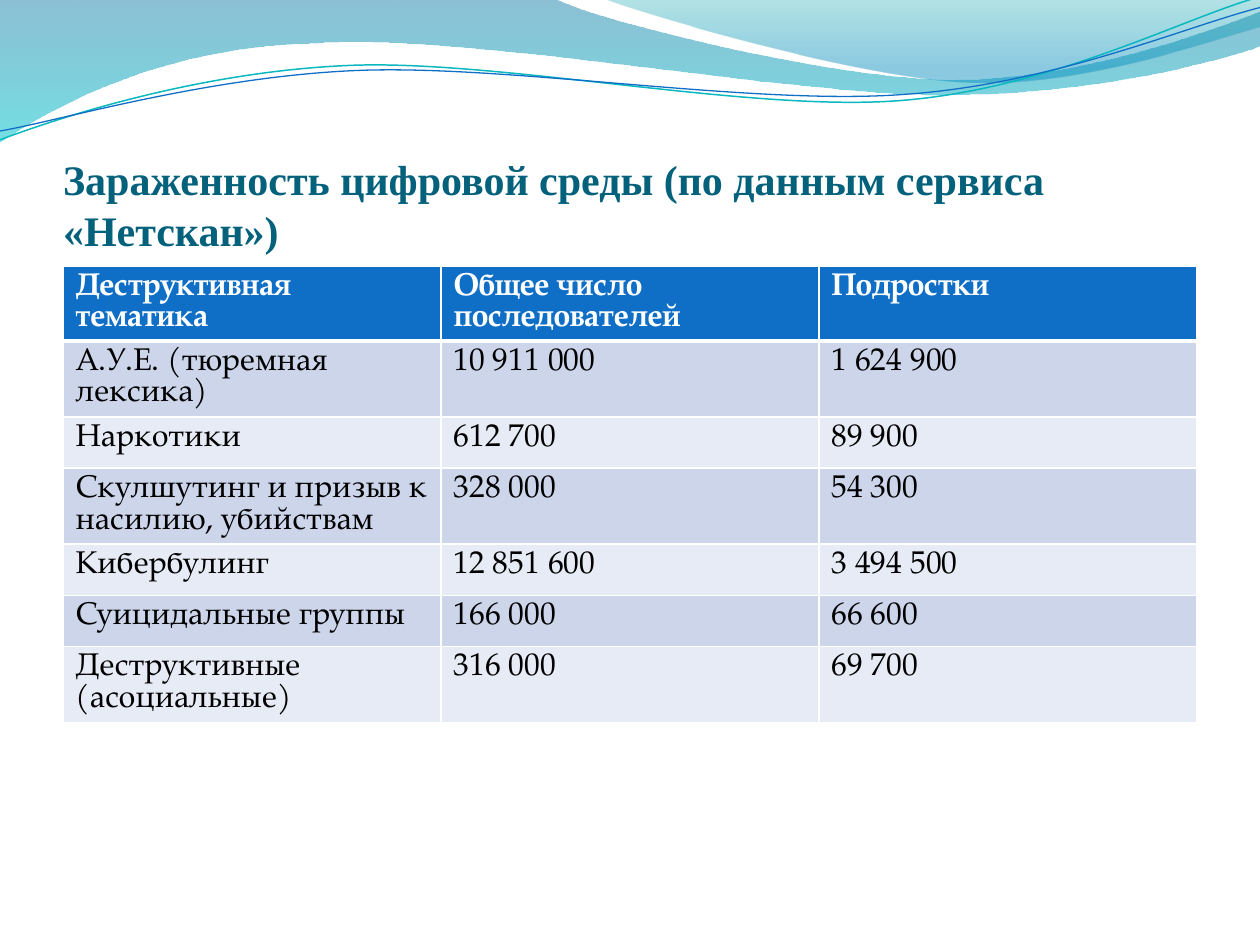
from lxml import etree
from pptx import Presentation
from pptx.dml.color import RGBColor
from pptx.enum.text import MSO_ANCHOR, PP_ALIGN
from pptx.oxml.ns import qn
from pptx.util import Inches, Pt

BOTTOM = MSO_ANCHOR.BOTTOM
LEFT = PP_ALIGN.LEFT
WHITE = RGBColor(0xFF, 0xFF, 0xFF)
BLACK = RGBColor(0, 0, 0)
TITLE_TEAL = RGBColor(0x04, 0x61, 0x7B)
BLUE = RGBColor(0x0F, 0x6F, 0xC6)
TURQUOISE = RGBColor(0x0A, 0xB8, 0xBF)
BAND_DARK = RGBColor(0xCC, 0xD5, 0xEA)
BAND_LIGHT = RGBColor(0xE7, 0xEB, 0xF5)
DEEP_BLUE = RGBColor(0x00, 0x74, 0xA1)
CYAN = RGBColor(0x00, 0xC6, 0xCF)
SEA_GREEN = RGBColor(0x00, 0xA1, 0xA9)
SKY_BLUE = RGBColor(0x00, 0x8B, 0xBF)

COLUMNS = 10
ROW_HEIGHT = Pt(29.2)

LEFT_WAVE = [
    (0, 0), (4.4, -0.01),
    (4.76, 0.17, 6.64, 0.63, 7.58, 0.63), (8.53, 0.63, 9.58, 0.26, 10, 0.09),
    (10.01, 0.36),
    (9.83, 0.44, 8.7, 0.76, 7.46, 0.75), (6.22, 0.75, 3.82, 0.28, 2.57, 0.34),
    (1.29, 0.36, 0.46, 0.83, -0.01, 1.13),
]
RIGHT_WAVE = [
    (4.79, -0.01),
    (5.09, 0.11, 6.82, 0.62, 7.69, 0.65), (8.56, 0.69, 9.61, 0.32, 10, 0.21),
    (10, 0),
]
TURQUOISE_CURVE = [
    (0, 1.11),
    (0.48, 0.93, 1.58, 0.57, 2.77, 0.52), (3.95, 0.47, 5.93, 0.89, 7.13, 0.8),
    (8.33, 0.71, 9.38, 0.15, 9.98, -0.02),
]
BLUE_CURVE = [
    (0, 1.04),
    (0.47, 0.96, 1.64, 0.61, 2.83, 0.56), (4.03, 0.51, 5.97, 0.84, 7.17, 0.75),
    (8.36, 0.67, 9.41, 0.21, 10, 0.06),
]

TITLE = "Зараженность цифровой среды (по данным сервиса «Нетскан»)"
ROWS = [
    ("Деструктивная тематика", "Общее число последователей", "Подростки"),
    ("А.У.Е. (тюремная лексика)", "10 911 000", "1 624 900"),
    ("Наркотики", "612 700", "89 900"),
    ("Скулшутинг и призыв к насилию, убийствам", "328 000", "54 300"),
    ("Кибербулинг", "12 851 600", "3 494 500"),
    ("Суицидальные группы", "166 000", "66 600"),
    ("Деструктивные (асоциальные)", "316 000", "69 700"),
]


def add_outline(s, box, segments, close):
    left, top, width = box
    unit = width / COLUMNS
    ends = [(left + seg[-2] * unit, top + seg[-1] * unit) for seg in segments]
    builder = s.shapes.build_freeform(*ends[0])
    builder.add_line_segments(ends[1:], close=close)
    sp = builder.convert_to_shape()
    sp.shadow.inherit = False
    lines = list(sp._element.spPr.iter(qn("a:lnTo")))
    for line, seg in zip(lines, segments[1:]):
        if len(seg) == 2:
            continue
        curve = etree.Element(qn("a:cubicBezTo"))
        for x, y in zip(seg[::2], seg[1::2]):
            etree.SubElement(curve, qn("a:pt"),
                             x=str(round(left + x * unit - sp.left)),
                             y=str(round(top + y * unit - sp.top)))
        line.getparent().replace(line, curve)
    return sp


def add_waves(s, box):
    for segments, stops in (
        (LEFT_WAVE, ((0, DEEP_BLUE, 45), (1, CYAN, 55))),
        (RIGHT_WAVE, ((0, SEA_GREEN, 30), (0.8, SKY_BLUE, 45))),
    ):
        sp = add_outline(s, box, segments, True)
        sp.line.fill.background()
        sp.fill.gradient()
        sp.fill.gradient_angle = 270
        for stop, (position, color, _) in zip(sp.fill.gradient_stops, stops):
            stop.position = position
            stop.color.rgb = color
        colors = sp._element.spPr.iter(qn("a:srgbClr"))
        for clr, (_, _, opacity) in zip(colors, stops):
            etree.SubElement(clr, qn("a:alpha"), val=str(opacity * 1000))
    for segments, color, weight in (
        (TURQUOISE_CURVE, TURQUOISE, 0.85),
        (BLUE_CURVE, BLUE, 0.75),
    ):
        sp = add_outline(s, box, segments, False)
        sp.fill.background()
        sp.line.color.rgb = color
        sp.line.width = Pt(weight)


def add_title(s, box):
    sp = s.shapes.title
    sp.left, sp.top, sp.width, sp.height = box
    tf = sp.text_frame
    tf.text = TITLE
    tf.word_wrap = True
    tf.vertical_anchor = BOTTOM
    tf.margin_left = tf.margin_right = tf.margin_bottom = 0
    tf.margin_top = Inches(0.05)
    p = tf.paragraphs[0]
    p.alignment = LEFT
    p.font.name = "Times New Roman"
    p.font.size = Pt(24)
    p.font.bold = True
    p.font.color.rgb = TITLE_TEAL


def set_borders(cell, top, bottom):
    tcPr = cell._tc.get_or_add_tcPr()
    for side, weight in (("L", 1), ("R", 1), ("T", top), ("B", bottom)):
        ln = etree.SubElement(tcPr, qn(f"a:ln{side}"), w=str(Pt(weight)))
        fill = etree.SubElement(ln, qn("a:solidFill"))
        etree.SubElement(fill, qn("a:srgbClr"), val=str(WHITE))


def add_topics_table(s, box):
    table = s.shapes.add_table(len(ROWS), len(ROWS[0]), *box).table
    for r, values in enumerate(ROWS):
        header = r == 0
        band = BAND_DARK if r % 2 else BAND_LIGHT
        for c, value in enumerate(values):
            cell = table.cell(r, c)
            set_borders(cell, 3 if r == 1 else 1, 3 if header else 1)
            cell.fill.solid()
            cell.fill.fore_color.rgb = BLUE if header else band
            cell.text = value
            p = cell.text_frame.paragraphs[0]
            p.font.name = "TeX Gyre Pagella"
            p.font.size = Pt(18)
            p.font.bold = header
            p.font.color.rgb = WHITE if header else BLACK


def main():
    prs = Presentation()
    prs.slide_width, prs.slide_height = Inches(10), Inches(7.5)
    s = prs.slides.add_slide(prs.slide_layouts[5])
    column = prs.slide_width // COLUMNS
    margin, content = column // 2, 9 * column
    add_waves(s, (0, 0, prs.slide_width))
    add_title(s, (margin, Inches(0.77), content, Inches(1.25)))
    add_topics_table(s, (margin, Pt(152.4), content, len(ROWS) * ROW_HEIGHT))
    prs.save("out.pptx")


if __name__ == "__main__":
    main()
